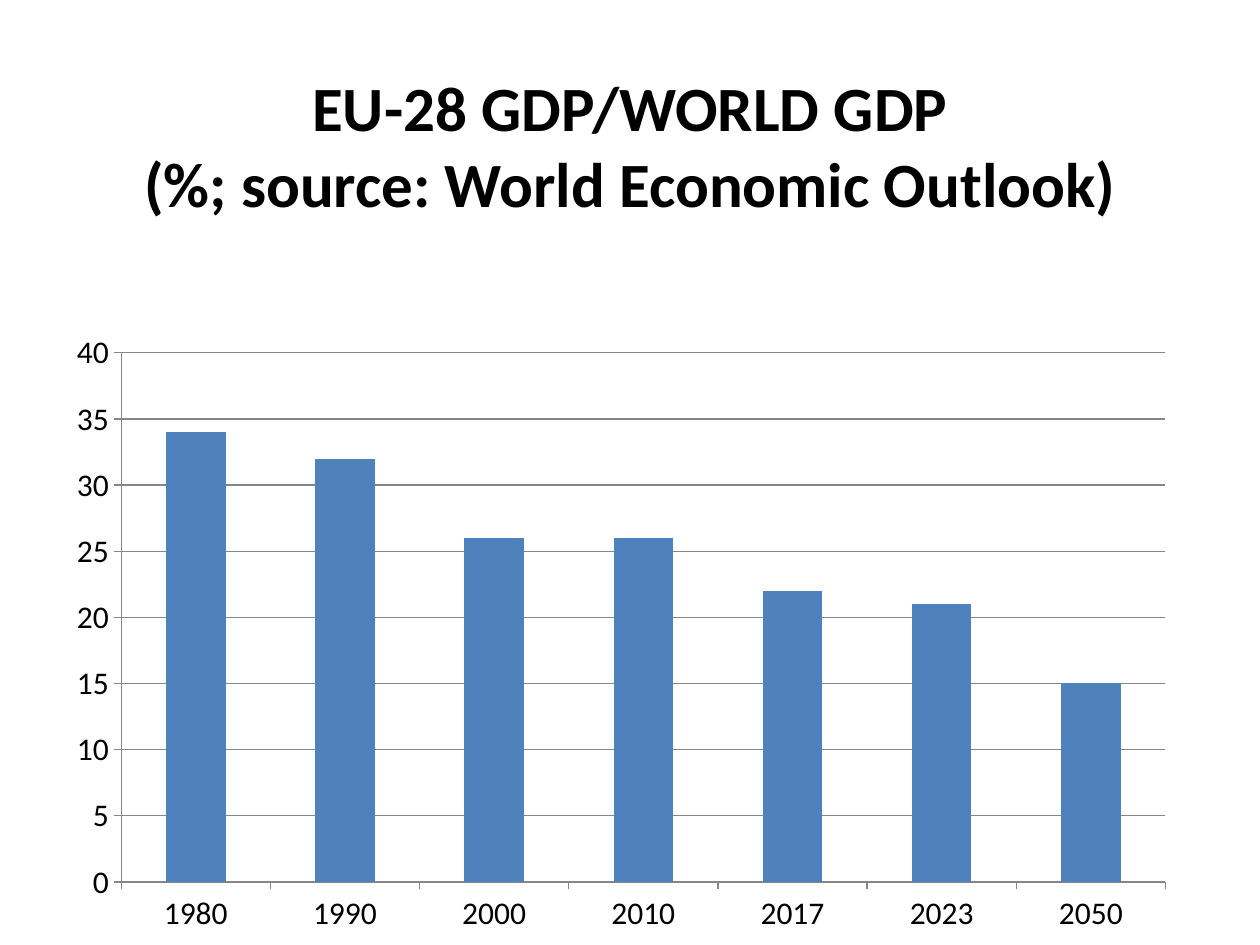
from pptx import Presentation
from pptx.chart.data import CategoryChartData
from pptx.dml.color import RGBColor
from pptx.enum.chart import XL_CHART_TYPE, XL_TICK_MARK
from pptx.enum.text import MSO_ANCHOR, PP_ALIGN
from pptx.util import Inches, Pt

TITLE_LINES = ["EU-28 GDP/WORLD GDP", "(%; source: World Economic Outlook)"]
GDP_SHARE = {
    "1980": 34,
    "1990": 32,
    "2000": 26,
    "2010": 26,
    "2017": 22,
    "2023": 21,
    "2050": 15,
}
TITLE_BOX = (0, 0.52, 10, 1.25)
CHART_BOX = (0.43, 2.55, 9, 4.95)
THEME = {
    "font": "Calibri",
    "title_size": Pt(36),
    "chart_size": Pt(18),
    "text": RGBColor(0x00, 0x00, 0x00),
    "bar": RGBColor(0x4F, 0x81, 0xBD),
    "line": RGBColor(0x86, 0x86, 0x86),
}


def style_font(font, size, bold=False):
    font.name = THEME["font"]
    font.size = size
    font.bold = bold
    font.color.rgb = THEME["text"]


def style_line(line):
    line.color.rgb = THEME["line"]
    line.width = Pt(0.75)


def add_title(s):
    sp = s.shapes.title
    sp.left, sp.top, sp.width, sp.height = map(Inches, TITLE_BOX)
    tf = sp.text_frame
    tf.word_wrap = True
    tf.vertical_anchor = MSO_ANCHOR.MIDDLE
    p = tf.paragraphs[0]
    p.alignment = PP_ALIGN.CENTER
    style_font(p.font, THEME["title_size"], bold=True)
    for i, line in enumerate(TITLE_LINES):
        if i:
            p.add_line_break()
        p.add_run().text = line


def add_gdp_chart(s):
    data = CategoryChartData()
    data.categories = list(GDP_SHARE)
    data.add_series("Series 1", list(GDP_SHARE.values()))
    chart = s.shapes.add_chart(
        XL_CHART_TYPE.COLUMN_STACKED, *map(Inches, CHART_BOX), data
    ).chart
    chart.has_title = False
    chart.has_legend = False
    style_font(chart.font, THEME["chart_size"])

    plot = chart.plots[0]
    plot.gap_width = 150
    plot.overlap = 100
    plot.vary_by_categories = False
    fill = plot.series[0].format.fill
    fill.solid()
    fill.fore_color.rgb = THEME["bar"]

    for axis in (chart.category_axis, chart.value_axis):
        axis.major_tick_mark = XL_TICK_MARK.OUTSIDE
        axis.minor_tick_mark = XL_TICK_MARK.NONE
        style_line(axis.format.line)
    value_axis = chart.value_axis
    value_axis.minimum_scale = 0
    value_axis.maximum_scale = 40
    value_axis.major_unit = 5
    value_axis.has_major_gridlines = True
    style_line(value_axis.major_gridlines.format.line)


def main():
    prs = Presentation()
    prs.slide_width, prs.slide_height = Inches(10), Inches(7.5)
    s = prs.slides.add_slide(prs.slide_layouts[5])
    add_title(s)
    add_gdp_chart(s)
    prs.save("out.pptx")


if __name__ == "__main__":
    main()
